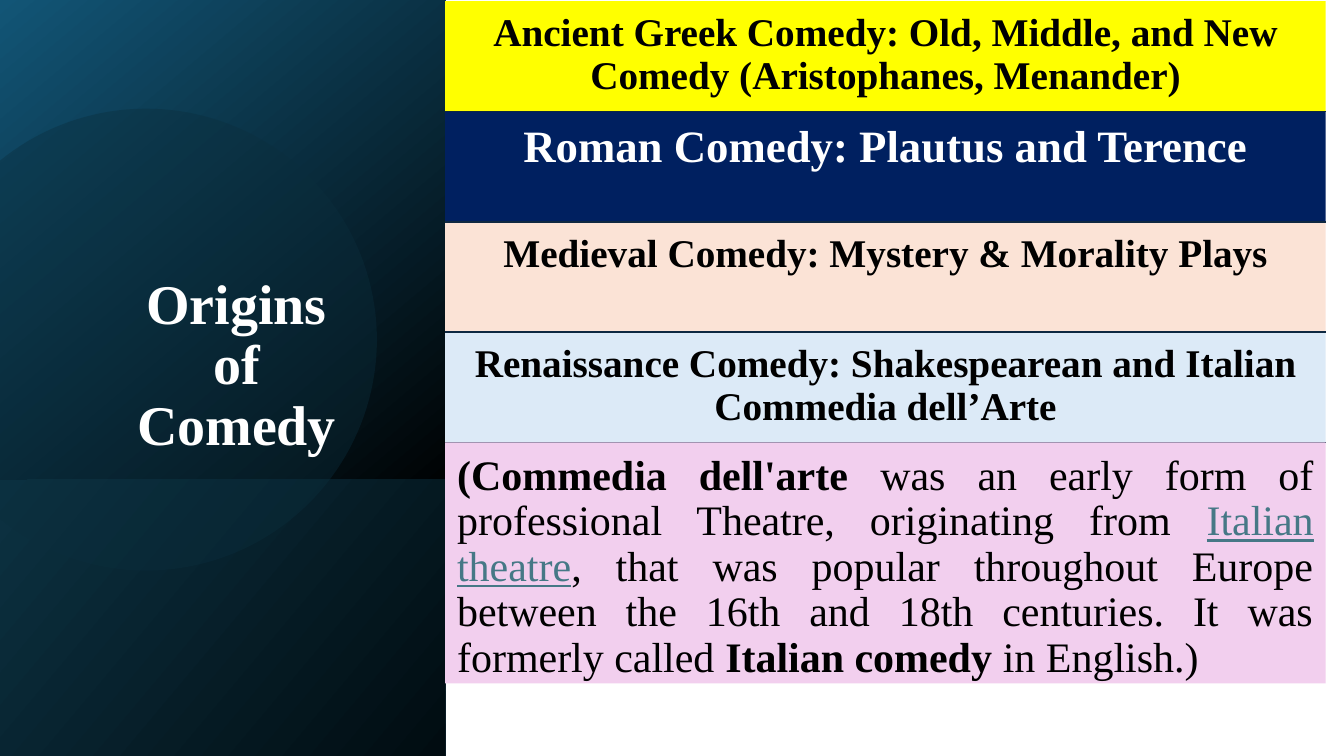
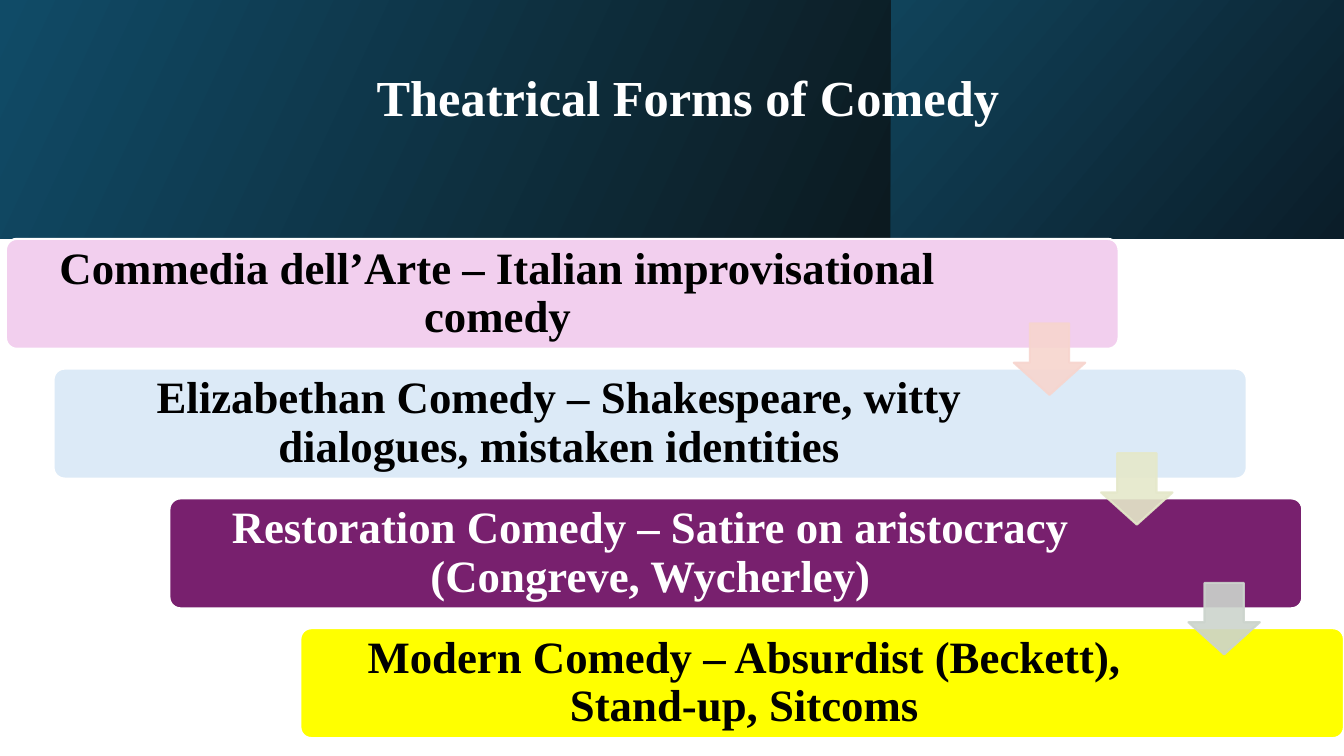
from math import acos, cos, pi, sin

from lxml.etree import SubElement
from pptx import Presentation
from pptx.dml.color import RGBColor
from pptx.enum.shapes import MSO_CONNECTOR, MSO_SHAPE as Shape
from pptx.enum.text import MSO_ANCHOR as Anchor, MSO_AUTO_SIZE, PP_ALIGN as Align
from pptx.oxml.ns import qn
from pptx.util import Cm, Pt

FONT = "Times New Roman"
BLACK, WHITE, YELLOW = "000000", "FFFFFF", "FFFF00"
PINK, PALE_BLUE, PEACH = "F2CFEE", "DCEAF7", "FBE3D6"
NAVY, PURPLE, LINK, RULE = "002060", "78206E", "467886", "0E2841"
SLIDE_WIDTH, SLIDE_HEIGHT = 33.87, 19.05
INSET = 0.3


def rgb(color):
    return RGBColor.from_string(color)


def set_opacity(shape, percent):
    for color in shape.element.spPr.iter(qn("a:srgbClr")):
        SubElement(color, qn("a:alpha")).set("val", str(percent * 1000))


class Deck:
    """Holds the presentation, its style and the current slide; lengths are in cm."""

    def __init__(self):
        self.prs = Presentation()
        self.prs.slide_width = Cm(SLIDE_WIDTH)
        self.prs.slide_height = Cm(SLIDE_HEIGHT)
        self.slide = None

    def new_slide(self):
        self.slide = self.prs.slides.add_slide(self.prs.slide_layouts[5])

    def title(self, text, size, *box):
        heading = self.slide.shapes.title
        heading.left, heading.top, heading.width, heading.height = map(Cm, box)
        frame = heading.text_frame
        frame.text = text
        frame.auto_size = MSO_AUTO_SIZE.NONE
        frame.vertical_anchor = Anchor.MIDDLE
        self.format(frame.paragraphs[0], size, WHITE)
        # Bring the title in front of the bands drawn so far
        self.slide.shapes.element.append(heading.element)

    def format(self, paragraph, size, color, bold=True, align=Align.CENTER):
        paragraph.alignment = align
        paragraph.line_spacing = 0.9
        for run in paragraph.runs:
            run.font.name = FONT
            run.font.size = Pt(size)
            run.font.bold = bold
            run.font.color.rgb = rgb(color)

    def box(self, kind, fill, *box, line=None, adjust=()):
        shape = self.slide.shapes.add_shape(kind, *map(Cm, box))
        for index, value in enumerate(adjust):
            shape.adjustments[index] = value
        return self.paint(shape, fill, line)

    def paint(self, shape, fill, line=None):
        shape.shadow.inherit = False
        shape.fill.solid()
        shape.fill.fore_color.rgb = rgb(fill)
        if line:
            shape.line.color.rgb = rgb(line)
            shape.line.width = Pt(1.5)
        else:
            shape.line.fill.background()
        return shape

    def band(self, start, end, angle, *box):
        """Draw a two-colour band; the angle runs counter-clockwise."""
        band = self.box(Shape.RECTANGLE, start, *box)
        band.fill.gradient()
        band.fill.gradient_angle = angle
        for stop, color, position in zip(band.fill.gradient_stops, (start, end), (0, 1)):
            stop.color.rgb = rgb(color)
            stop.position = position

    def disc(self, fill, opacity, x, y, radius):
        """Draw a disc cut off at the left edge of the slide."""
        reach = acos(-x / radius)
        turns = [reach * (step / 60 - 1) for step in range(121)]
        points = [(Cm(x + radius * cos(a)), Cm(y + radius * sin(a))) for a in turns]
        outline = self.slide.shapes.build_freeform(*points[0])
        outline.add_line_segments(points[1:], close=True)
        set_opacity(self.paint(outline.convert_to_shape(), fill), opacity)

    def frame(self, shape, anchor, right=INSET):
        frame = shape.text_frame
        frame.word_wrap = True
        frame.vertical_anchor = anchor
        frame.margin_left = frame.margin_top = frame.margin_bottom = Cm(INSET)
        frame.margin_right = Cm(right)
        return frame

    def label(self, shape, text, size, color, anchor=Anchor.TOP, right=INSET):
        frame = self.frame(shape, anchor, right)
        frame.text = text
        self.format(frame.paragraphs[0], size, color)

    def passage(self, shape, pieces, size):
        """Fill a shape with justified text from (text, style) pieces."""
        paragraph = self.frame(shape, Anchor.TOP).paragraphs[0]
        for text, _ in pieces:
            paragraph.add_run().text = text
        self.format(paragraph, size, BLACK, False, Align.JUSTIFY)
        for run, (_, style) in zip(paragraph.runs, pieces):
            run.font.bold = style == "bold"
            if style == "link":
                run.font.underline = True
                run.font.color.rgb = rgb(LINK)

    def rule(self, left, right, y):
        rule = self.slide.shapes.add_connector(
            MSO_CONNECTOR.STRAIGHT, Cm(left), Cm(y), Cm(right), Cm(y))
        rule.line.color.rgb = rgb(RULE)
        rule.line.width = Pt(1)
        SubElement(rule.element.spPr, qn("a:effectLst"))

    def arrow(self, color, left, top, size):
        arrow = self.box(Shape.DOWN_ARROW, color, left, top, size, size,
                         line=color, adjust=(0.45, 0.55))
        arrow.adjustments[0], arrow.adjustments[1] = 0.55, 0.45
        set_opacity(arrow, 90)


def origins(deck):
    panel, split = 11.22, 12.09
    top, width, height = 0.03, 22.19, 2.78
    eras = [
        ("Ancient Greek Comedy: Old, Middle, and New Comedy (Aristophanes, Menander)",
         28, YELLOW, BLACK),
        ("Roman Comedy: Plautus and Terence", 32, NAVY, WHITE),
        ("Medieval Comedy: Mystery & Morality Plays", 28, PEACH, BLACK),
        ("Renaissance Comedy: Shakespearean and Italian Commedia dell’Arte",
         28, PALE_BLUE, BLACK),
    ]
    commedia = [
        ("(Commedia dell'arte", "bold"),
        (" was an early form of professional Theatre, originating from ", ""),
        ("Italian theatre", "link"),
        (", that was popular throughout Europe between the 16th and 18th centuries."
         " It was formerly called ", ""),
        ("Italian comedy", "bold"),
        (" in English.)", ""),
    ]
    deck.new_slide()
    deck.band("125576", "000304", 310, 0, 0, panel, split)
    deck.band("0C3242", "010C11", 320, 0, split, panel, SLIDE_HEIGHT - split)
    deck.disc("0B2E3D", 40, 3.68, 8.56, 5.82)
    deck.title("Origins\vof\vComedy", 40, 1.63, 4.93, 8.66, 8.61)
    for row, (text, size, fill, color) in enumerate(eras):
        y = top + row * height
        era = deck.box(Shape.RECTANGLE, fill, panel, y, width, height)
        deck.label(era, text, size, color)
        if row:
            deck.rule(panel, panel + width, y)
    y = top + len(eras) * height
    deck.rule(panel, panel + width, y)
    deck.passage(deck.box(Shape.RECTANGLE, PINK, panel, y, width, 6.07), commedia, 30)


def theatrical_forms(deck):
    banner, split = 6.02, 22.45
    step, height = 3.27, 2.77
    forms = [
        ("Commedia dell’Arte – Italian improvisational comedy",
         PINK, BLACK, 0.15, 28.04, 3.56),
        ("Elizabethan Comedy – Shakespeare, witty dialogues, mistaken identities",
         PALE_BLUE, BLACK, 1.35, 30.07, 4.88),
        ("Restoration Comedy – Satire on aristocracy (Congreve, Wycherley)",
         PURPLE, WHITE, 4.27, 28.55, 4.6),
        ("Modern Comedy – Absurdist (Beckett), Stand-up, Sitcoms",
         YELLOW, BLACK, 7.57, 26.3, 4.22),
    ]
    deck.new_slide()
    deck.band("104B67", "0C1A20", 335, 0, 0, split, banner)
    deck.band("10435A", "0B1D29", 320, split, 0, SLIDE_WIDTH - split, banner)
    deck.title("Theatrical Forms of Comedy", 36, 3.84, 0.9, 27, 3.23)
    for row, (text, fill, color, left, width, right) in enumerate(forms):
        form = deck.box(Shape.ROUNDED_RECTANGLE, fill, left, banner + row * step,
                        width, height, line=WHITE, adjust=(0.1,))
        deck.label(form, text, 32, color, Anchor.MIDDLE, right)
    for row, color in enumerate(("F7D5CE", "E5E8CA", "CCD4CD")):
        deck.arrow(color, 25.55 + row * 2.2, 8.15 + row * step, 1.8)


def main():
    deck = Deck()
    origins(deck)
    theatrical_forms(deck)
    deck.prs.save("out.pptx")


if __name__ == "__main__":
    main()
